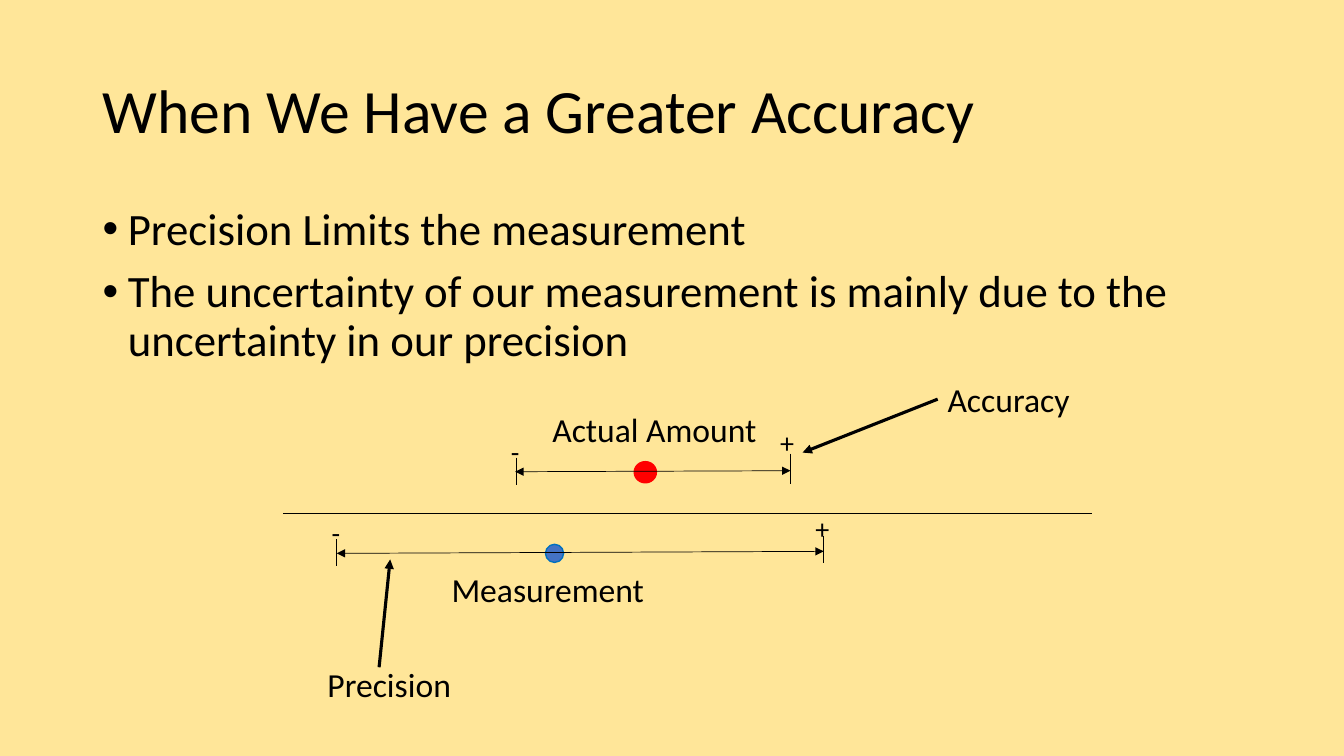
"""Build the slide on greater accuracy, with its number line of ranges."""
from lxml.etree import SubElement
from pptx import Presentation
from pptx.dml.color import RGBColor
from pptx.enum.shapes import MSO_CONNECTOR, MSO_SHAPE
from pptx.enum.text import MSO_ANCHOR
from pptx.oxml.ns import qn
from pptx.util import Inches, Pt

BACKGROUND = RGBColor(0xFF, 0xE6, 0x99)
BLACK = RGBColor(0, 0, 0)
RED = RGBColor(0xFF, 0, 0)
BLUE = RGBColor(0x44, 0x72, 0xC4)
BLUE_EDGE = RGBColor(0, 0x70, 0xC0)
FONT = "Calibri"

TITLE = "When We Have a Greater Accuracy"
BULLETS = [
    "Precision Limits the measurement",
    "The uncertainty of our measurement is mainly due to the uncertainty in our precision",
]
LABELS = [
    ("Accuracy", 24, (9.3, 3.68, 1.53, 0.55)),
    ("Actual Amount", 24, (5.38, 3.98, 3.09, 0.55)),
    ("Measurement", 24, (4.38, 5.57, 2.12, 1)),
    ("Precision", 24, (3.15, 6.51, 1.53, 0.55)),
    ("-", 20, (4.97, 4.24, 0.36, 0.49)),
    ("+", 20, (7.64, 4.15, 0.75, 0.49)),
    ("-", 20, (3.19, 5.04, 0.36, 0.49)),
    ("+", 20, (7.99, 5, 0.36, 0.49)),
]
DOTS = [
    ((6.29, 4.58, 0.22, 0.21), RED, RED),
    ((5.41, 5.4, 0.18, 0.18), BLUE, BLUE_EDGE),
]
NUMBER_LINE = ((2.81, 5.09), (10.83, 5.09))
END_TICKS = [(5.12, 4.54, 4.81), (7.84, 4.5, 4.8), (3.34, 5.35, 5.62), (8.17, 5.32, 5.59)]
RANGES = [((5.11, 4.68), (7.84, 4.67)), ((3.34, 5.49), (8.17, 5.47))]
POINTERS = [((9.3, 3.96), (7.96, 4.49)), ((3.76, 6.62), (3.87, 5.55))]


def add_text(slide, box, lines, size, spacing, before=0, after=0, bulleted=False):
    frame = slide.shapes.add_textbox(*map(Inches, box)).text_frame
    frame.word_wrap = True
    for index, line in enumerate(lines):
        paragraph = frame.paragraphs[0] if index == 0 else frame.add_paragraph()
        paragraph.line_spacing = spacing
        paragraph.space_before = Pt(before)
        paragraph.space_after = Pt(after)
        if bulleted:
            properties = paragraph._p.get_or_add_pPr()
            properties.set("marL", str(Inches(0.25)))
            properties.set("indent", str(-Inches(0.25)))
            SubElement(properties, qn("a:buFont"), typeface="Arial")
            SubElement(properties, qn("a:buChar"), char="•")
        run = paragraph.add_run()
        run.text = line
        run.font.name = FONT
        run.font.size = Pt(size)
        run.font.color.rgb = BLACK
    return frame


def add_line(slide, start, end, width=0.5, arrowheads=()):
    connector = slide.shapes.add_connector(
        MSO_CONNECTOR.STRAIGHT, *map(Inches, start + end))
    connector.line.color.rgb = BLACK
    connector.line.width = Pt(width)
    for arrowhead in arrowheads:
        SubElement(connector.line._get_or_add_ln(), qn(f"a:{arrowhead}"), type="triangle")
    SubElement(connector._element.spPr, qn("a:effectLst"))


def add_dot(slide, box, fill, edge):
    shape = slide.shapes.add_shape(MSO_SHAPE.OVAL, *map(Inches, box))
    shape.shadow.inherit = False
    shape.fill.solid()
    shape.fill.fore_color.rgb = fill
    shape.line.color.rgb = edge
    shape.line.width = Pt(1)


def main():
    presentation = Presentation()
    presentation.slide_width = Inches(13.33)
    presentation.slide_height = Inches(7.5)
    slide = presentation.slides.add_slide(presentation.slide_layouts[6])
    slide.background.fill.solid()
    slide.background.fill.fore_color.rgb = BACKGROUND

    title = add_text(slide, (0.92, 0.4, 11.5, 1.45), [TITLE], 44, 0.9)
    title.vertical_anchor = MSO_ANCHOR.MIDDLE
    add_text(slide, (0.92, 2, 11.5, 4.76), BULLETS, 32, 0.9, before=10, bulleted=True)

    for text, size, box in LABELS:
        add_text(slide, box, [text], size, 1.07, after=8)
    for dot in DOTS:
        add_dot(slide, *dot)
    add_line(slide, *NUMBER_LINE)
    for x, top, bottom in END_TICKS:
        add_line(slide, (x, top), (x, bottom))
    for start, end in RANGES:
        add_line(slide, start, end, arrowheads=("headEnd", "tailEnd"))
    for start, end in POINTERS:
        add_line(slide, start, end, 2.25, ("tailEnd",))

    presentation.save("out.pptx")


if __name__ == "__main__":
    main()
